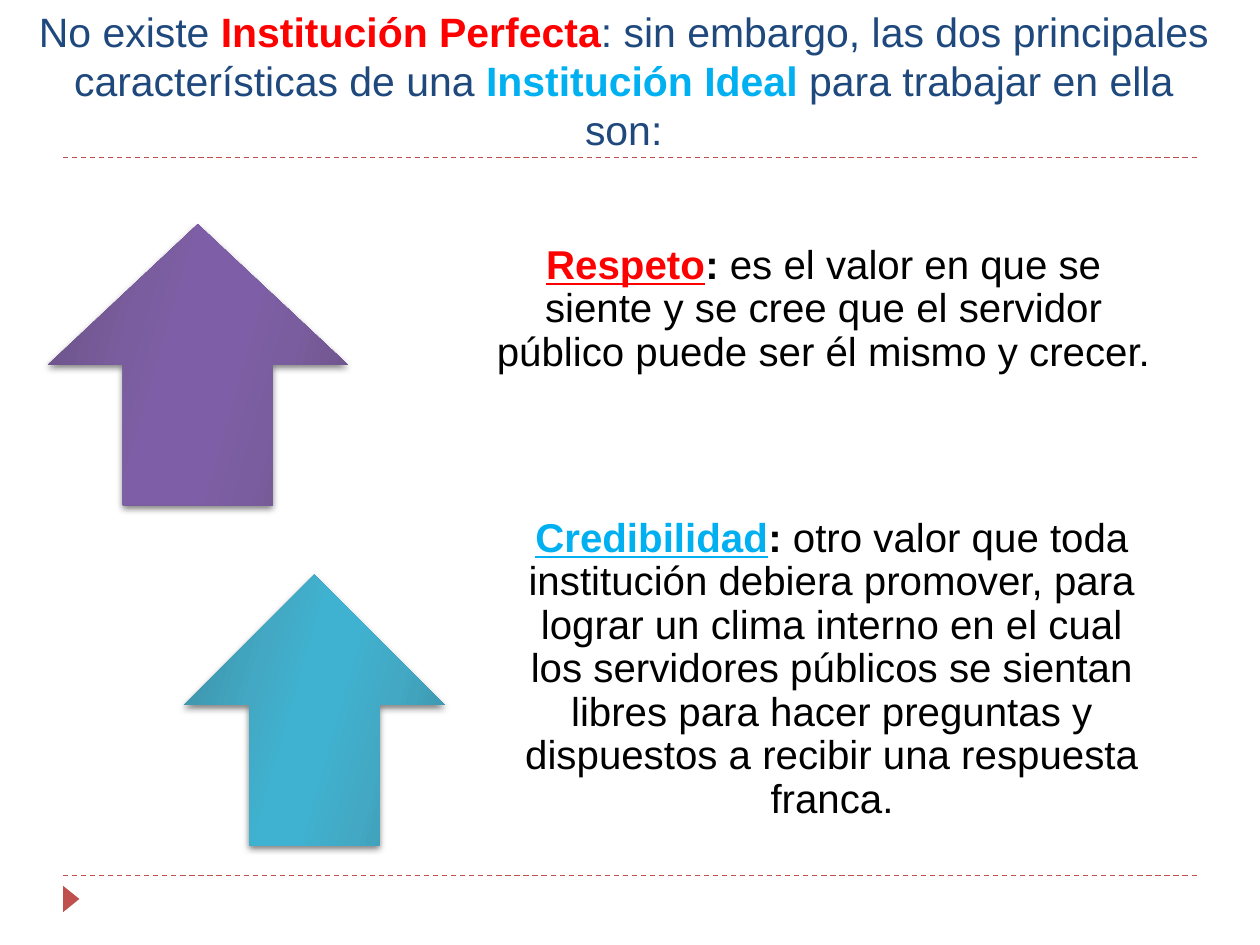
from dataclasses import dataclass

from pptx import Presentation
from pptx import util as u
from pptx.dml.color import RGBColor
from pptx.enum import dml, shapes, text
from pptx.oxml import parse_xml
from pptx.oxml.ns import nsdecls, qn

Inches, Pt = u.Inches, u.Pt


@dataclass(frozen=True)
class Theme:
    font: str = "Arial"
    title_size: float = 23.4
    body_size: float = 23
    navy: str = "1F497D"
    red: str = "FF0000"
    sky: str = "00B0F0"
    black: str = "000000"
    accent: str = "C0504D"
    # Edge, shoulder and centre colours of each arrow
    purple: tuple = ("695285", "7A5D9E", "7F5EA8")
    teal: tuple = ("3D8DA2", "42A8C3", "40B2D1")


THEME = Theme()


def inches(box):
    return [Inches(length) for length in box]


def add_rich_text(slide, box, runs, size, insets, anchor, spacing=1.0):
    """Centred paragraph; runs are (wording, colour, bold, underlined)."""
    frame = slide.shapes.add_textbox(*inches(box)).text_frame
    frame.word_wrap = True
    frame.vertical_anchor = anchor
    (frame.margin_left, frame.margin_top,
     frame.margin_right, frame.margin_bottom) = inches(insets)
    paragraph = frame.paragraphs[0]
    paragraph.alignment = text.PP_ALIGN.CENTER
    paragraph.line_spacing = spacing
    paragraph.font.name = THEME.font
    paragraph.font.size = Pt(size)
    for wording, colour, bold, underlined in runs:
        run = paragraph.add_run()
        run.text = wording
        run.font.color.rgb = RGBColor.from_string(colour)
        run.font.bold = bold
        run.font.underline = underlined


def add_title(slide, box):
    runs = [
        ("No existe ", THEME.navy, False, False),
        ("Institución Perfecta", THEME.red, True, False),
        (": sin embargo, las dos principales características de una ",
         THEME.navy, False, False),
        ("Institución Ideal ", THEME.sky, True, False),
        ("para trabajar en ella son:", THEME.navy, False, False),
    ]
    add_rich_text(slide, box, runs, THEME.title_size, (0.05, 0.05, 0.05, 0.05),
                  text.MSO_ANCHOR.TOP)


def add_frame(slide, box):
    """Dashed rules along the top and bottom of the box, with a marker below."""
    left, top, width, height = box
    for y in (top, top + height):
        rule = slide.shapes.add_connector(
            shapes.MSO_CONNECTOR.STRAIGHT, *inches((left, y, left + width, y)))
        rule.line.color.rgb = RGBColor.from_string(THEME.accent)
        rule.line.width = Pt(0.75)
        rule.line.dash_style = dml.MSO_LINE.DASH
        rule._element.spPr.append(parse_xml(f"<a:effectLst {nsdecls('a')}/>"))
    marker = slide.shapes.add_shape(
        shapes.MSO_SHAPE.ISOSCELES_TRIANGLE,
        *inches((left - 0.04, top + height + 0.12, 0.21, 0.13)))
    marker.rotation = 90
    marker.shadow.inherit = False
    marker.fill.solid()
    marker.fill.fore_color.rgb = RGBColor.from_string(THEME.accent)
    marker.line.fill.background()


def add_arrow(slide, box, colours):
    arrow = slide.shapes.add_shape(shapes.MSO_SHAPE.UP_ARROW, *inches(box))
    arrow.line.fill.background()
    arrow.shadow.inherit = False
    properties = arrow._element.spPr

    stops = zip((0, 30, 45, 55, 70 + 3, 100), colours + colours[::-1])
    stop_xml = "".join(
        f'<a:gs pos="{position * 1000}"><a:srgbClr val="{colour}"/></a:gs>'
        for position, colour in stops)
    gradient = parse_xml(
        f'<a:gradFill {nsdecls("a")} rotWithShape="1"><a:gsLst>{stop_xml}</a:gsLst>'
        f'<a:lin ang="{16 * 60000}" scaled="0"/></a:gradFill>')
    properties.find(qn("a:prstGeom")).addnext(gradient)

    properties.find(qn("a:effectLst")).append(parse_xml(
        f'<a:outerShdw {nsdecls("a")} blurRad="{Pt(4)}" dist="{Pt(2)}" '
        f'dir="{90 * 60000}" rotWithShape="0"><a:srgbClr val="{THEME.black}">'
        '<a:alpha val="50000"/></a:srgbClr></a:outerShdw>'))


def add_value(slide, box, name, colour, definition, bottom_inset=0.18):
    runs = [
        (name, colour, True, True),
        (": ", THEME.black, True, False),
        (definition, THEME.black, False, False),
    ]
    add_rich_text(slide, box, runs, THEME.body_size,
                  (0.18, 0, 0.18, bottom_inset), text.MSO_ANCHOR.MIDDLE, 0.9)


def main():
    deck = Presentation()
    deck.slide_width, deck.slide_height = Inches(10), Inches(7.5)
    slide = deck.slides.add_slide(deck.slide_layouts[6])

    add_frame(slide, (0.5, 1.25, 9, 5.7))
    add_title(slide, (0.21, 0, 9.48, 1.73))
    add_arrow(slide, (0.38, 1.78, 2.38, 2.23), THEME.purple)
    add_value(slide, (3.74, 1.94, 5.6, 1.56), "Respeto", THEME.red,
              "es el valor en que se siente y se cree que el servidor público "
              "puede ser él mismo y crecer.", bottom_inset=0.52)
    add_arrow(slide, (1.46, 4.56, 2.07, 2.15), THEME.teal)
    add_value(slide, (3.98, 4.14, 5.25, 2.53), "Credibilidad", THEME.sky,
              "otro valor que toda institución debiera promover, para lograr un "
              "clima interno en el cual los servidores públicos se sientan libres "
              "para hacer preguntas y dispuestos a recibir una respuesta franca.")
    deck.save("out.pptx")


if __name__ == "__main__":
    main()
